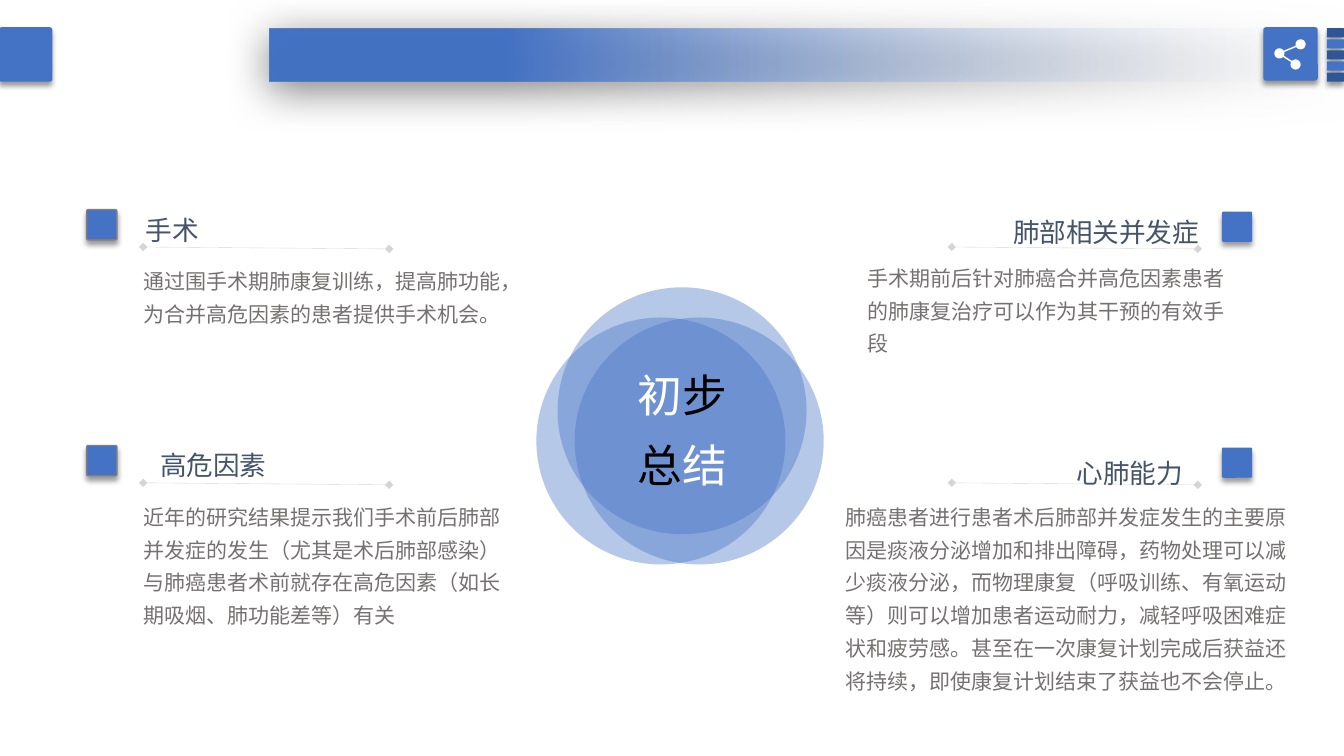
from math import cos, radians, sin
from lxml.etree import SubElement
from pptx import Presentation
from pptx.dml.color import RGBColor
from pptx.enum.dml import MSO_LINE
from pptx.enum.shapes import MSO_CONNECTOR, MSO_SHAPE
from pptx.enum.text import MSO_ANCHOR, MSO_AUTO_SIZE, PP_ALIGN
from pptx.oxml.ns import qn
from pptx.util import Inches, Pt

# Content: heading, heading box, body, body box (inches), by column and row
PANELS = {
    (0, 0): ("手术", (1.35, 1.98, 0.8, 0.51),
             "通过围手术期肺康复训练，提高肺功能，为合并高危因素的患者提供手术机会。",
             (1.33, 2.54, 3.86, 0.75)),
    (0, 1): ("高危因素", (1.49, 4.31, 1.33, 0.51),
             "近年的研究结果提示我们手术前后肺部并发症的发生（尤其是术后肺部感染）"
             "与肺癌患者术前就存在高危因素（如长期吸烟、肺功能差等）有关",
             (1.33, 4.88, 3.86, 1.4)),
    (1, 0): ("肺部相关并发症", (9.95, 2, 2.12, 0.51),
             "手术期前后针对肺癌合并高危因素患者的肺康复治疗可以作为其干预的有效手段",
             (8.51, 2.51, 3.86, 1.07)),
    (1, 1): ("心肺能力", (10.58, 4.39, 1.33, 0.51),
             "肺癌患者进行患者术后肺部并发症发生的主要原因是痰液分泌增加和排出障碍，"
             "药物处理可以减少痰液分泌，而物理康复（呼吸训练、有氧运动等）则可以增加"
             "患者运动耐力，减轻呼吸困难症状和疲劳感。甚至在一次康复计划完成后获益还"
             "将持续，即使康复计划结束了获益也不会停止。",
             (8.29, 4.88, 4.66, 2.07)),
}
SUMMARY = [[("初", "white"), ("步", "black")], [("总", "black"), ("结", "white")]]

COLORS = {"blue": "4472C4", "navy": "2F5597", "pale": "F7FAFD", "white": "FFFFFF",
          "black": "000000", "heading": "44546A", "body": "767171",
          "edge": "7F7F7F", "rule": "808080"}
FONT = "Noto Sans CJK SC"

# Grid
MARKER_X, MARKER_Y = (0.86, 12.12), (2.08, 2.1)
RULE_X, RULE_Y = (1.42, 9.44), 2.45
ROW_STEP = 2.34
CIRCLES = [(5.32, 3.15), (5.53, 2.85), (5.7, 3.15)]
SOFT_SHADOW, WIDE_SHADOW = (40, 4, 3, 90), (50, 31, 6, 97)

prs = Presentation()
prs.slide_width, prs.slide_height = Inches(13.33), Inches(7.5)
slide = prs.slides.add_slide(prs.slide_layouts[6])
shapes = slide.shapes


def rgb(color):
    return RGBColor.from_string(COLORS[color])


def set_alpha(parent, percent):
    for clr in parent.iter(qn("a:srgbClr")):
        SubElement(clr, qn("a:alpha"), val=str(percent * 1000))


def add_shadow(shape, alpha, blur, distance, direction):
    effects = shape._element.spPr.find(qn("a:effectLst"))
    outer = SubElement(effects, qn("a:outerShdw"), blurRad=str(Pt(blur)),
                       dist=str(Pt(distance)), dir=str(direction * 60000),
                       algn="ctr", rotWithShape="0")
    SubElement(outer, qn("a:srgbClr"), val=COLORS["black"])
    set_alpha(outer, alpha)


def add_plain(kind, box, color="blue"):
    shape = shapes.add_shape(kind, *map(Inches, box))
    shape.shadow.inherit = False
    shape.fill.solid()
    shape.fill.fore_color.rgb = rgb(color)
    shape.line.fill.background()
    return shape


def add_tile(box, color="blue"):
    tile = add_plain(MSO_SHAPE.ROUNDED_RECTANGLE, box, color)
    tile.adjustments[0] = 0.05
    add_shadow(tile, *SOFT_SHADOW)
    return tile


def add_text(box, paragraphs, size, align=PP_ALIGN.LEFT, wrap=True):
    frame = shapes.add_textbox(*map(Inches, box)).text_frame
    frame.word_wrap = wrap
    frame.auto_size = MSO_AUTO_SIZE.SHAPE_TO_FIT_TEXT
    frame.vertical_anchor = MSO_ANCHOR.TOP
    for i, runs in enumerate(paragraphs):
        paragraph = frame.add_paragraph() if i else frame.paragraphs[0]
        paragraph.alignment = align
        paragraph.line_spacing = 1.3
        for words, color in runs:
            run = paragraph.add_run()
            run.text = words
            run.font.size = Pt(size)
            run.font.color.rgb = rgb(color)
            run.font.name = FONT
            SubElement(run.font._element, qn("a:ea"), typeface=FONT)


def add_rule(x, y):
    rule = shapes.add_connector(MSO_CONNECTOR.STRAIGHT, Inches(x), Inches(y),
                                Inches(x + 2.44), Inches(y + 0.02))
    rule.line.width = Pt(0.25)
    rule.line.color.rgb = rgb("rule")
    rule.line.dash_style = MSO_LINE.SOLID
    properties = rule._element.spPr
    set_alpha(properties, 33)
    for end in ("headEnd", "tailEnd"):
        SubElement(properties.find(qn("a:ln")), qn(f"a:{end}"), type="diamond")
    SubElement(properties, qn("a:effectLst"))


# Overlapping circles with the summary
for x, y in CIRCLES:
    circle = add_plain(MSO_SHAPE.OVAL, (x, y, 2.47, 2.45))
    set_alpha(circle._element.spPr, 39)
add_text((5.93, 3.44, 1.67, 1.43), SUMMARY, 32, PP_ALIGN.CENTER)

# Four panels
for (column, row), (heading, heading_box, body, body_box) in PANELS.items():
    drop = row * ROW_STEP
    marker = add_tile((MARKER_X[column], MARKER_Y[column] + drop, 0.3, 0.3))
    if column == 0:
        marker.line.color.rgb = rgb("edge")
        marker.line.width = Pt(1)
    add_rule(RULE_X[column], RULE_Y + drop)
    add_text(heading_box, [[(heading, "heading")]], 19, wrap=False)
    add_text(body_box, [[(body, "body")]], 15)

# Fading banner
banner = add_plain(MSO_SHAPE.RECTANGLE, (2.67, 0.28, 10.67, 0.53))
banner.fill.gradient()
banner.fill.gradient_angle = 180
fade, solid = banner.fill.gradient_stops
fade.position, solid.position = 0, 0.78
fade.color.rgb, solid.color.rgb = rgb("pale"), rgb("blue")
set_alpha(next(banner._element.spPr.iter(qn("a:gs"))), 0)
add_shadow(banner, *WIDE_SHADOW)

# Header tiles and stacked bars
add_tile((-0.01, 0.27, 0.53, 0.54))
for i in range(5):
    add_tile((13.16, 0.28 + 0.11 * i, 0.17, 0.09), "blue" if i % 2 else "navy")
add_tile((12.53, 0.27, 0.54, 0.53))

# Share icon: arcs around three nodes (centre, start and end angle), joined by links
TOP, MIDDLE, BOTTOM = (12.9, 0.44), (12.69, 0.53), (12.85, 0.64)
ARCS = [(TOP, 164, 508), (MIDDLE, -16, 28), (BOTTOM, 224, 568), (MIDDLE, 44, 328)]
NODE_RADIUS, ARC_STEPS = 0.05, 24
outline = []
for (x, y), start, end in ARCS:
    for step in range(ARC_STEPS + 1):
        angle = radians(start + (end - start) * step / ARC_STEPS)
        outline.append((Inches(x + NODE_RADIUS * cos(angle)),
                        Inches(y + NODE_RADIUS * sin(angle))))
builder = shapes.build_freeform(*outline[0])
builder.add_line_segments(outline[1:], close=True)
share = builder.convert_to_shape()
share.shadow.inherit = False
share.fill.solid()
share.fill.fore_color.rgb = rgb("white")
share.line.fill.background()

prs.save("out.pptx")
